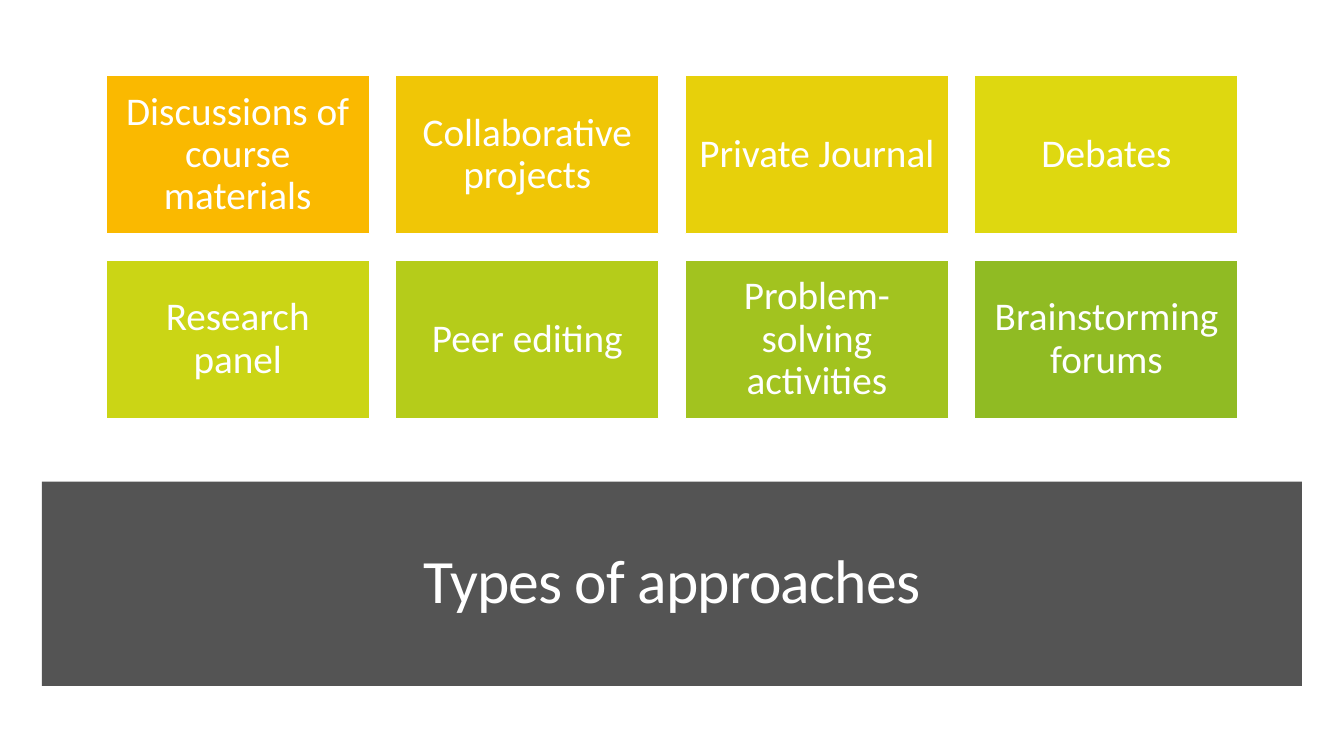
from dataclasses import dataclass

from pptx import Presentation
from pptx.dml.color import RGBColor
from pptx.enum.shapes import MSO_SHAPE
from pptx.enum.text import MSO_ANCHOR, MSO_AUTO_SIZE, PP_ALIGN
from pptx.util import Pt


@dataclass(frozen=True)
class Theme:
    font: str = "Calibri"
    white: str = "FFFFFF"
    band: str = "545454"
    title_size: float = 44
    card_size: float = 28
    card_outline: float = 0.85
    card_inset: float = 8.4


@dataclass(frozen=True)
class Box:
    """A rectangle in points."""
    left: float
    top: float
    width: float
    height: float

    def inset(self, horizontal, vertical):
        return Box(self.left + horizontal, self.top + vertical,
                   self.width - 2 * horizontal, self.height - 2 * vertical)


THEME = Theme()
TITLE_ONLY_LAYOUT = 5
COLUMNS = 4
CARD_GAP = 18.8
APPROACHES = [
    ("Discussions of course materials", "FAB900"),
    ("Collaborative projects", "F0C606"),
    ("Private Journal", "E7D00B"),
    ("Debates", "DED810"),
    ("Research panel", "CBD515"),
    ("Peer editing", "B5CC1A"),
    ("Problem-solving activities", "A2C31F"),
    ("Brainstorming forums", "90BB23"),
]


def set_attributes(target, values):
    for name, value in values.items():
        setattr(target, name, value)


def place(shape, box):
    set_attributes(shape, {
        "left": Pt(box.left), "top": Pt(box.top),
        "width": Pt(box.width), "height": Pt(box.height),
    })


def add_rectangle(slide, box, color):
    shape = slide.shapes.add_shape(MSO_SHAPE.RECTANGLE, 0, 0, 0, 0)
    place(shape, box)
    shape.shadow.inherit = False
    shape.fill.solid()
    shape.fill.fore_color.rgb = RGBColor.from_string(color)
    shape.line.fill.background()
    return shape


def write_centered(shape, text, size, inset):
    """Fill the shape with one centred white paragraph and return its run."""
    frame = shape.text_frame
    set_attributes(frame, {
        "word_wrap": True,
        "auto_size": MSO_AUTO_SIZE.NONE,
        "vertical_anchor": MSO_ANCHOR.MIDDLE,
        "margin_left": Pt(inset), "margin_right": Pt(inset),
        "margin_top": Pt(inset), "margin_bottom": Pt(inset),
    })
    paragraph = frame.paragraphs[0]
    set_attributes(paragraph, {"alignment": PP_ALIGN.CENTER, "line_spacing": 0.9})
    run = paragraph.add_run()
    run.text = text
    set_attributes(run.font, {"name": THEME.font, "size": Pt(size)})
    run.font.color.rgb = RGBColor.from_string(THEME.white)
    return run


def add_title_band(slide, box, text):
    band = add_rectangle(slide, box, THEME.band)
    title = slide.shapes.title
    band._element.addnext(title._element)
    place(title, box.inset(13.7, 18))
    run = write_centered(title, text, THEME.title_size, 3.6)
    run._r.get_or_add_rPr().set("spc", "-60")


def add_card_grid(slide, box, cards):
    rows = -(-len(cards) // COLUMNS)
    width = (box.width - (COLUMNS - 1) * CARD_GAP) / COLUMNS
    height = (box.height - (rows - 1) * CARD_GAP) / rows
    for index, (text, color) in enumerate(cards):
        row, column = divmod(index, COLUMNS)
        card = add_rectangle(slide, Box(
            box.left + column * (width + CARD_GAP),
            box.top + row * (height + CARD_GAP), width, height), color)
        card.line.color.rgb = RGBColor.from_string(THEME.white)
        card.line.width = Pt(THEME.card_outline)
        write_centered(card, text, THEME.card_size, THEME.card_inset)


def main():
    presentation = Presentation()
    set_attributes(presentation, {"slide_width": Pt(960), "slide_height": Pt(540)})
    slide = presentation.slides.add_slide(presentation.slide_layouts[TITLE_ONLY_LAYOUT])
    add_title_band(slide, Box(30, 344, 900, 146), "Types of approaches")
    add_card_grid(slide, Box(75.8, 54.2, 808.6, 244.6), APPROACHES)
    presentation.save("out.pptx")


if __name__ == "__main__":
    main()
